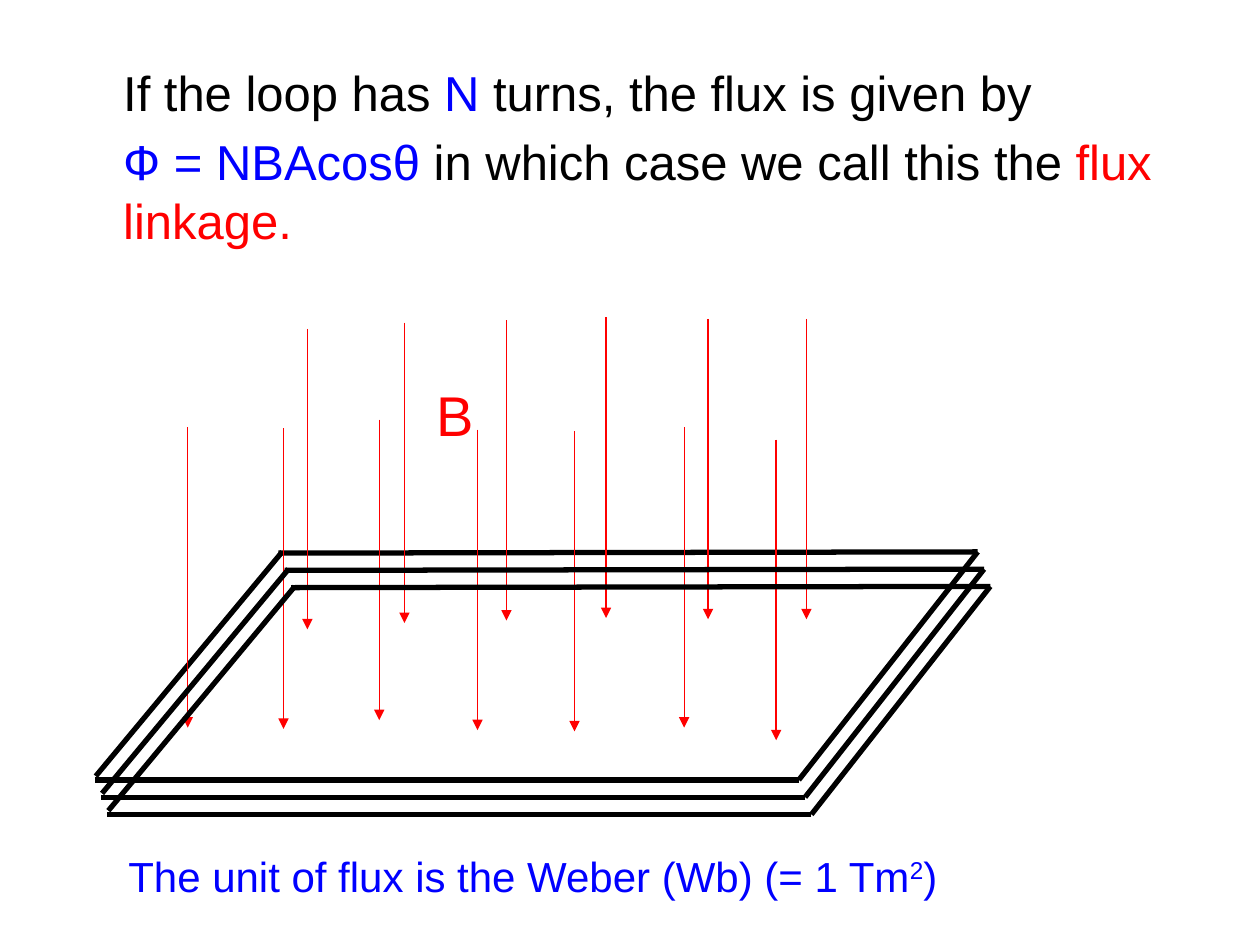
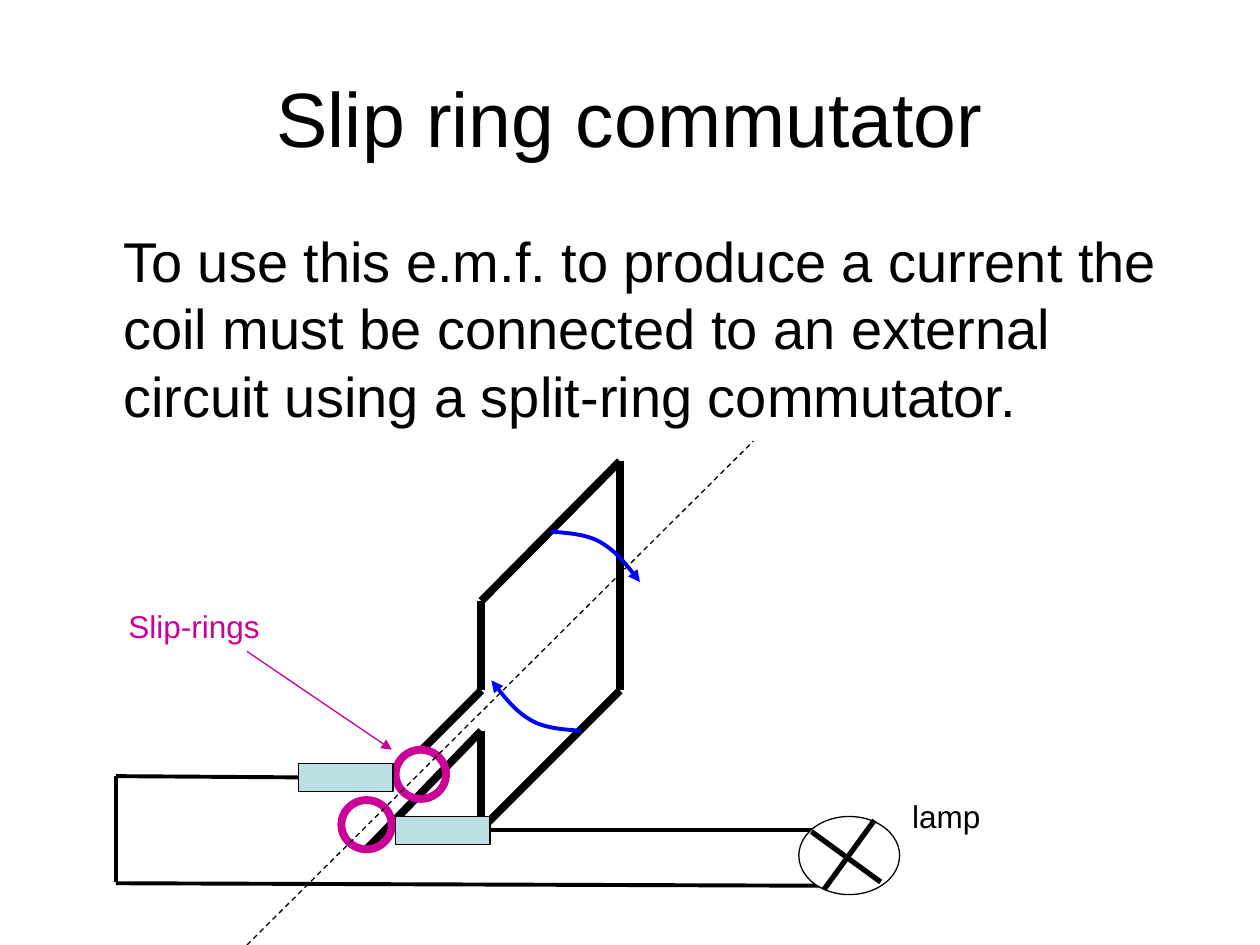
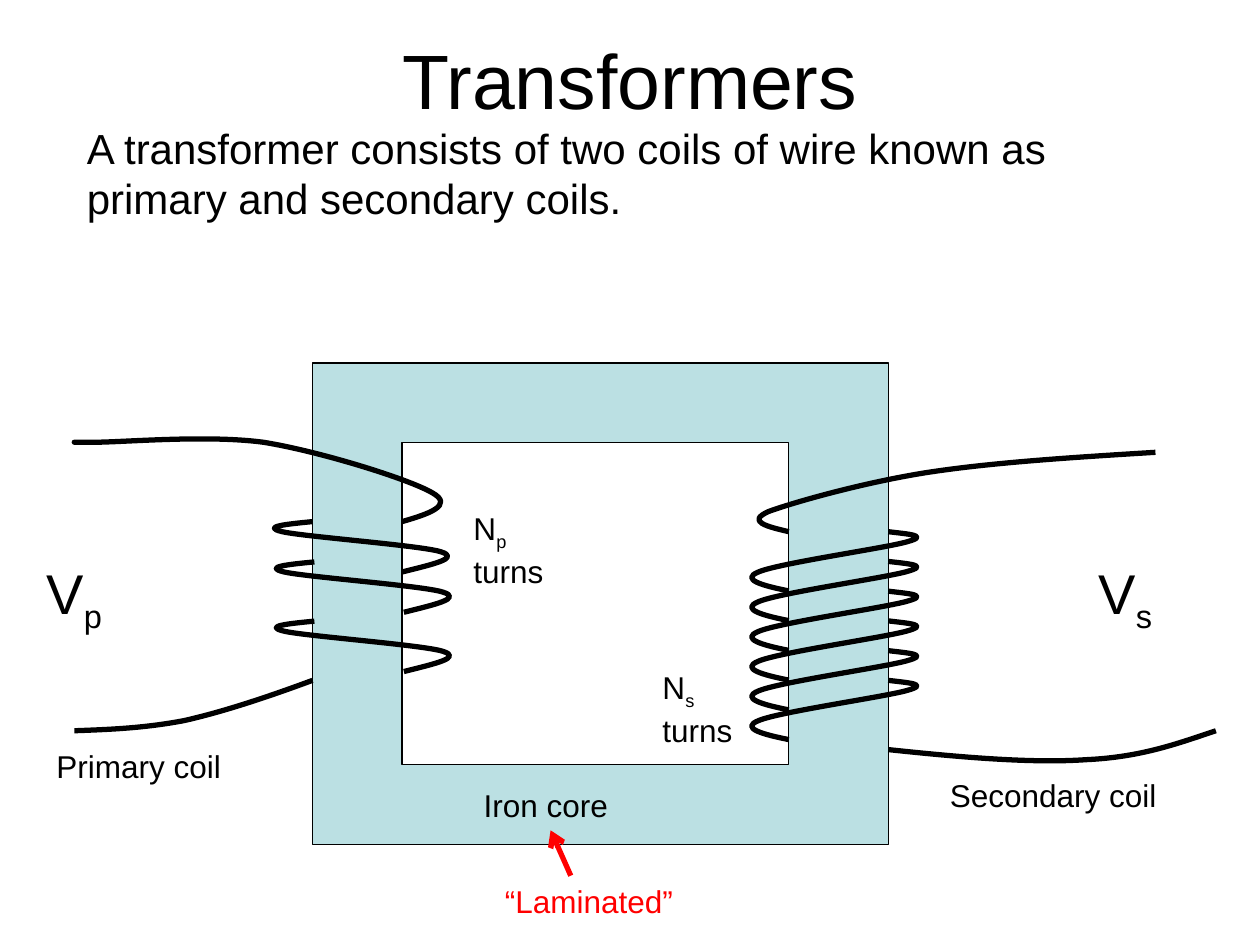
import dataclasses
import itertools
import typing

import pptx
import pptx.dml.color
import pptx.enum.dml
import pptx.enum.shapes
import pptx.enum.text
import pptx.oxml
import pptx.oxml.ns
import pptx.shapes.autoshape
import pptx.shapes.connector
import pptx.shapes.shapetree
import pptx.slide
import pptx.util

COLORS = {
    "black": "000000",
    "white": "FFFFFF",
    "blue": "0000FF",
    "red": "FF0000",
    "magenta": "CC0099",
    "teal": "BBE0E3",
}
FONT = "Arial"
COLUMNS, ROWS = 100, 75
WIDTH, HEIGHT = pptx.util.Inches(10), pptx.util.Inches(7.5)
RECT = pptx.enum.shapes.MSO_SHAPE.RECTANGLE
OVAL = pptx.enum.shapes.MSO_SHAPE.OVAL

Shapes = typing.Union[pptx.shapes.shapetree.SlideShapes, pptx.shapes.shapetree.GroupShapes]
Point = tuple[float, float]
Box = tuple[float, float, float, float]


class Run(typing.NamedTuple):
    text: str
    color: str = "black"
    baseline: int = 0


@dataclasses.dataclass(frozen=True)
class Label:
    box: Box
    size: float
    paragraphs: list[list[Run]]
    indent: float = 0
    title: bool = False


@dataclasses.dataclass(frozen=True)
class Pen:
    color: str = "black"
    width: float = 3
    head: str = ""
    dashed: bool = False


@dataclasses.dataclass(frozen=True)
class Line:
    start: Point
    end: Point
    pen: Pen = Pen()


@dataclasses.dataclass(frozen=True)
class Figure:
    kind: pptx.enum.shapes.MSO_SHAPE
    box: Box
    pen: Pen
    fill: str = ""


THIN = Pen(width=0.75)
WIRE = Pen(width=2.25)
COIL = Pen(width=4.5)
RING = Pen("magenta", 4.5)
FIELD = Pen("red", 0.75, "triangle")
ROTATION = Pen("blue", 2.25, "triangle")


def across(columns: float) -> int:
    return round(WIDTH * columns / COLUMNS)


def down(rows: float) -> int:
    return round(HEIGHT * rows / ROWS)


def place(box: Box) -> tuple[int, int, int, int]:
    left, top, width, height = box
    return across(left), down(top), across(width), down(height)


def shift(points: list[Point], dx: float, dy: float) -> list[Point]:
    return [(x + dx, y + dy) for x, y in points]


def rgb(name: str) -> pptx.dml.color.RGBColor:
    return pptx.dml.color.RGBColor.from_string(COLORS[name])


def draw_with(
    sp: typing.Union[pptx.shapes.autoshape.Shape, pptx.shapes.connector.Connector], pen: Pen
) -> None:
    sp.line.color.rgb = rgb(pen.color)
    sp.line.width = pptx.util.Pt(pen.width)
    if pen.dashed:
        sp.line.dash_style = pptx.enum.dml.MSO_LINE.DASH
    if pen.head:
        tail = pptx.oxml.parse_xml(
            f'<a:tailEnd {pptx.oxml.ns.nsdecls("a")} type="{pen.head}"/>'
        )
        sp.element.spPr.get_or_add_ln().append(tail)


def add_line(shapes: Shapes, line: Line) -> pptx.shapes.connector.Connector:
    (x1, y1), (x2, y2) = line.start, line.end
    cx = shapes.add_connector(
        pptx.enum.shapes.MSO_CONNECTOR.STRAIGHT, across(x1), down(y1), across(x2), down(y2)
    )
    draw_with(cx, line.pen)
    cx.element.spPr.append(
        pptx.oxml.parse_xml(f'<a:effectLst {pptx.oxml.ns.nsdecls("a")}/>')
    )
    return cx


def add_figure(shapes: Shapes, figure: Figure) -> pptx.shapes.autoshape.Shape:
    sp = shapes.add_shape(figure.kind, *place(figure.box))
    sp.shadow.inherit = False
    if figure.fill:
        sp.fill.solid()
        sp.fill.fore_color.rgb = rgb(figure.fill)
    else:
        sp.fill.background()
    draw_with(sp, figure.pen)
    return sp


def add_curve(shapes: Shapes, points: list[Point], pen: Pen = Pen()) -> None:
    spots = [(across(x), down(y)) for x, y in points]
    builder = shapes.build_freeform(*spots[0])
    builder.add_line_segments(spots[1:], close=False)
    sp = builder.convert_to_shape()
    sp.shadow.inherit = False
    sp.fill.background()
    draw_with(sp, pen)
    segments = list(sp.element.iter(pptx.oxml.ns.qn("a:lnTo")))
    for i in range(0, len(segments), 3):
        first = segments[i]
        bezier = pptx.oxml.parse_xml(f'<a:cubicBezTo {pptx.oxml.ns.nsdecls("a")}/>')
        first.addprevious(bezier)
        for segment in segments[i:i + 3]:
            bezier.append(segment[0])
            segment.getparent().remove(segment)


def add_label(shapes: Shapes, label: Label) -> None:
    tf = shapes.add_textbox(*place(label.box)).text_frame
    tf.word_wrap = True
    if label.title:
        tf.vertical_anchor = pptx.enum.text.MSO_ANCHOR.MIDDLE
    for i, runs in enumerate(label.paragraphs):
        p = tf.add_paragraph() if i else tf.paragraphs[0]
        if i:
            p.space_before = pptx.util.Pt(label.size * 0.2)
        if label.title:
            p.alignment = pptx.enum.text.PP_ALIGN.CENTER
        if label.indent:
            p._p.get_or_add_pPr().set("marL", str(across(label.indent)))
        for run in runs:
            r = p.add_run()
            r.text = run.text
            r.font.name = FONT
            r.font.size = pptx.util.Pt(label.size)
            r.font.color.rgb = rgb(run.color)
            if run.baseline:
                r.font._element.set("baseline", str(run.baseline * 1000))


def add_title(shapes: Shapes, text: str, top: float) -> None:
    add_label(shapes, Label((5, top, 90, 12.5), 44, [[Run(text)]], title=True))


def add_caption(
    shapes: Shapes, text: str, box: Box, color: str = "black", size: float = 18
) -> None:
    add_label(shapes, Label(box, size, [[Run(text, color)]]))


def build_flux(slide: pptx.slide.Slide) -> None:
    shapes = slide.shapes
    add_label(shapes, Label((5, 4.5, 90, 62.5), 28, [
        [Run("If the loop has "), Run("N", "blue"), Run(" turns, the flux is given by")],
        [
            Run("Ф = NBAcosθ", "blue"),
            Run(" in which case we call this the "),
            Run("flux linkage.", "red"),
        ],
    ], indent=3.8))

    loop_sides = [
        [(7.6, 61.6), (22.4, 43.8)],
        [(63.4, 61.9), (77.6, 43.8)],
        [(63.4, 61.9), (7.5, 61.9)],
        [(77.6, 43.8), (22.1, 43.9)],
    ]

    def add_turn(turn: int) -> None:
        group = shapes.add_group_shape()
        for side in loop_sides:
            add_line(group.shapes, Line(*shift(side, 0.5 * turn, 1.37 * turn)))

    add_turn(0)
    back_row = [(24.4, 26.1), (32.1, 25.6), (40.2, 25.4), (48.1, 25.2), (56.2, 25.3), (64, 25.3)]
    front_row = [
        (14.9, 33.9), (22.5, 34), (30.1, 33.3), (37.9, 34.1), (45.6, 34.2), (54.3, 33.9),
        (61.6, 34.9),
    ]
    for x, y in back_row + front_row:
        add_line(shapes, Line((x, y), (x, y + 23.85), FIELD))
    add_caption(shapes, "B", (33.7, 29.7, 6.7, 6.3), "red", 32)
    add_turn(1)
    add_turn(2)
    add_label(shapes, Label((9.2, 67, 80.8, 5), 24, [[
        Run("The unit of flux is the Weber (Wb) (= 1 Tm", "blue"),
        Run("2", "blue", 30),
        Run(")", "blue"),
    ]]))


def build_commutator(slide: pptx.slide.Slide) -> None:
    shapes = slide.shapes
    add_title(shapes, "Slip ring commutator", 3)
    add_label(shapes, Label((5, 17.5, 90, 49.5), 32, [[Run(
        "To use this e.m.f. to produce a current the coil must be connected to an external "
        "circuit using a split-ring commutator."
    )]], indent=3.8))

    coil_corners = [
        (33.5, 59.5), (38.2, 54.8), (38.2, 47.7), (49.2, 36.6), (49.2, 54.8), (38.2, 65.8),
        (38.2, 58), (29.1, 67.4),
    ]
    for start, end in itertools.pairwise(coil_corners):
        add_line(shapes, Line(start, end, COIL))

    upper_arc = [
        (43.7, 42.2), (45.1, 42.3), (46.5, 42.4), (47.6, 43), (48.8, 43.7), (49.8, 44.9),
        (50.8, 46.2),
    ]
    add_curve(shapes, upper_arc, ROTATION)
    add_curve(shapes, [(89.8 - x, 100.2 - y) for x, y in upper_arc], ROTATION)

    for left, top in [(31.4, 59.5), (27.1, 63.5)]:
        add_figure(shapes, Figure(OVAL, (left, top, 4, 3.9), RING))
    add_line(shapes, Line((19.6, 75), (59.8, 35), Pen(width=0.75, dashed=True)))
    upper_brush, lower_brush = (
        add_figure(shapes, Figure(RECT, (left, top, 7.5, 2.2), THIN, "teal"))
        for left, top in [(23.7, 60.6), (31.4, 64.8)]
    )
    add_line(shapes, Line((23.7, 61.7), (9.2, 61.6), WIRE)).begin_connect(upper_brush, 1)
    add_line(shapes, Line((66.2, 70.3), (9.2, 70.1), WIRE))
    add_line(shapes, Line((65.5, 65.9), (38.9, 65.9), WIRE)).end_connect(lower_brush, 3)
    add_figure(shapes, Figure(OVAL, (63.4, 64.8, 8, 6.2), THIN, "white"))
    add_line(shapes, Line((69.4, 65.1), (65.4, 70.6)))
    add_line(shapes, Line((69.9, 70), (64.4, 66)))
    add_line(shapes, Line((9.2, 70), (9.2, 61.6), WIRE))

    add_caption(shapes, "Slip-rings", (9.2, 47.7, 21.9, 4), "magenta")
    add_line(shapes, Line((19.6, 51.7), (31.1, 59.5), Pen("magenta", 0.75, "triangle")))
    add_caption(shapes, "lamp", (71.4, 62.8, 23.6, 4))


def build_transformer(slide: pptx.slide.Slide) -> None:
    shapes = slide.shapes
    add_title(shapes, "Transformers", 0)
    add_figure(shapes, Figure(RECT, (24.8, 28.8, 45.7, 38.2), THIN, "teal"))
    add_figure(shapes, Figure(RECT, (31.9, 35.1, 30.7, 25.6), THIN, "white"))

    primary_top = [
        (6.7, 35.1), (5.9, 35.1), (5.1, 35.1), (7.5, 35.1), (9.8, 35.1), (16.4, 34.5),
        (20.9, 35.1), (25.3, 35.8), (32.4, 38), (34.3, 39.1), (36.1, 40.1), (34, 40.8),
        (31.9, 41.4),
    ]
    primary_turn = [
        (24.8, 41.4), (22.8, 41.6), (20.7, 41.8), (22.4, 42.2), (24.1, 42.6), (33.5, 43.3),
        (35, 43.8), (36.6, 44.3), (34.3, 44.8), (31.9, 45.4),
    ]
    primary_bottom = [
        (24.8, 54), (21.3, 55.3), (17.7, 56.5), (14.6, 57.2), (11.4, 57.8), (8.7, 57.9),
        (5.9, 58),
    ]
    secondary_top = [
        (91.7, 35.9), (85.2, 36.3), (78.8, 36.7), (73.6, 37.5), (68.5, 38.3), (62.9, 39.9),
        (61, 40.6), (59.2, 41.4), (60.9, 41.8), (62.6, 42.2),
    ]
    secondary_turn = [
        (70.5, 42.2), (72.1, 42.4), (73.8, 42.5), (72, 43), (70.3, 43.5), (61.8, 44.7),
        (60.2, 45.4), (58.7, 46), (60.6, 46.5), (62.6, 46.9),
    ]
    secondary_bottom = [
        (70.5, 59.5), (76.2, 60.1), (81.9, 60.6), (86.2, 60.3), (90.6, 60.1), (93.5, 59),
        (96.5, 58),
    ]
    primary_turns = [shift(primary_turn, *by) for by in [(0, 0), (0.15, 3.2), (0.15, 7.9)]]
    secondary_turns = [shift(secondary_turn, 0, 2.36 * turn) for turn in range(6)]
    for curve in [
        primary_top, *primary_turns, primary_bottom,
        secondary_top, *secondary_turns, secondary_bottom,
    ]:
        add_curve(shapes, curve)

    for letter, turns_at, volts_at in [
        ("p", (36.6, 39.9), (2.7, 43.8)),
        ("s", (51.6, 52.5), (86.2, 43.8)),
    ]:
        subscript = Run(letter, baseline=-25)
        add_label(shapes, Label((*turns_at, 8.7, 7), 18, [[Run("N"), subscript, Run(" turns")]]))
        add_label(shapes, Label((*volts_at, 7.9, 6.3), 32, [[Run("V"), subscript]]))

    add_caption(shapes, "Primary coil", (3.5, 58.8, 19.7, 4))
    add_caption(shapes, "Secondary coil", (74.4, 61.1, 19.7, 4))
    add_caption(shapes, "Iron core", (37.4, 61.9, 30.7, 4))
    add_caption(shapes, "“Laminated”", (39.1, 69.5, 27.3, 4), "red")
    add_line(shapes, Line((45.3, 69.5), (43.7, 65.9), Pen("red", 3, "arrow")))
    add_caption(
        shapes,
        "A transformer consists of two coils of wire known as primary and secondary coils.",
        (5.9, 9.2, 89.1, 9.1),
        size=24,
    )


def main() -> None:
    prs = pptx.Presentation()
    prs.slide_width, prs.slide_height = WIDTH, HEIGHT
    for build in (build_flux, build_commutator, build_transformer):
        build(prs.slides.add_slide(prs.slide_layouts[6]))
    prs.save("out.pptx")


if __name__ == "__main__":
    main()
